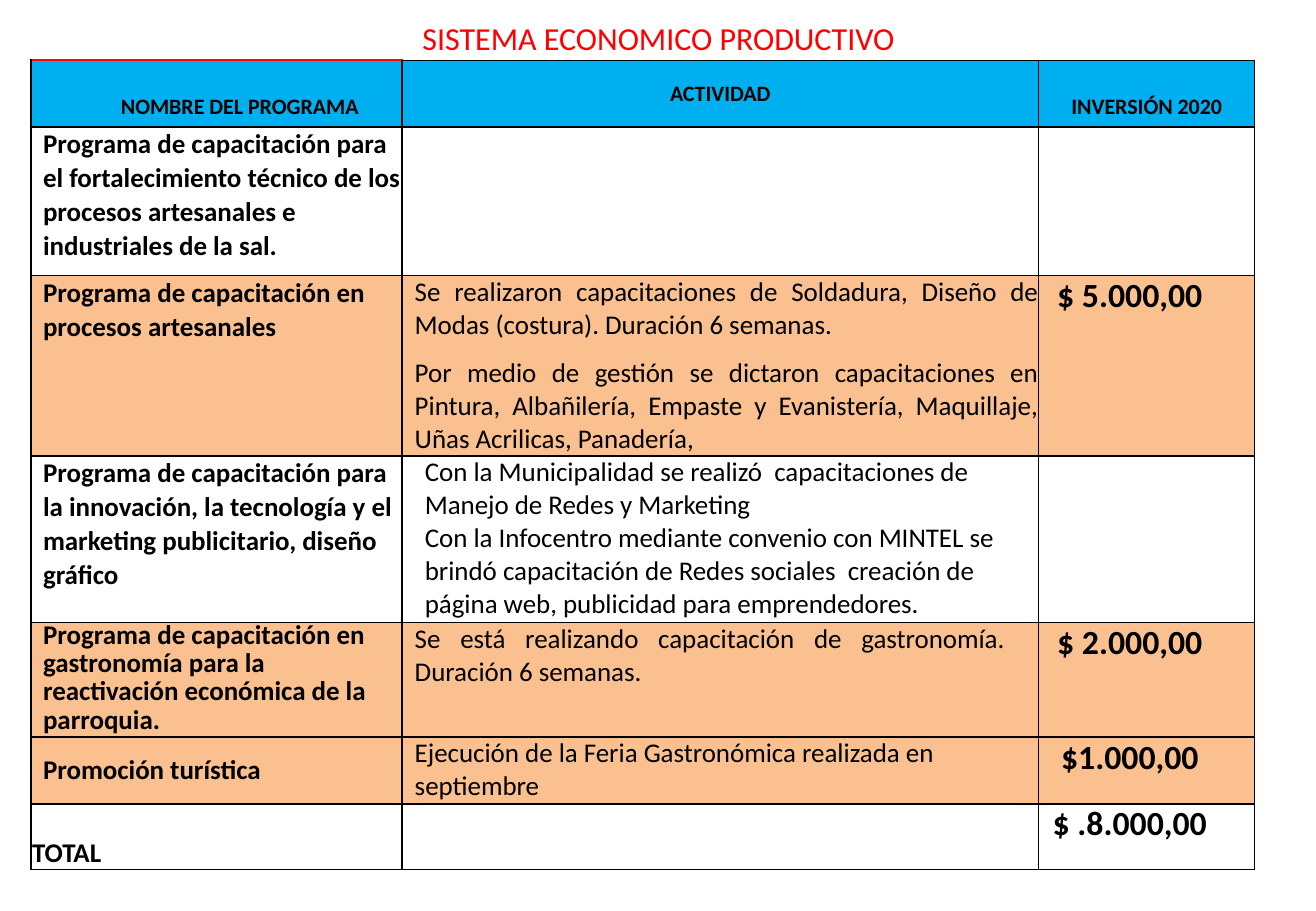
import pptx
import pptx.util
import pptx.dml.color
import pptx.enum.text
import pptx.oxml
import pptx.oxml.ns
from dataclasses import dataclass

Cm, Pt = pptx.util.Cm, pptx.util.Pt
ALIGN = pptx.enum.text.PP_ALIGN
ANCHOR = pptx.enum.text.MSO_ANCHOR


@dataclass(frozen=True)
class Theme:
    font: str = "Calibri"
    ink: str = "000000"
    title: str = "FF0000"
    header: str = "00AFEF"
    funded: str = "FAC090"
    plain: str = "FFFFFF"
    title_size: int = 19
    header_size: int = 13
    body_size: int = 16
    amount_size: int = 20
    border: float = 1
    accent_border: float = 1.5


THEME = Theme()

TITLE = "SISTEMA ECONOMICO PRODUCTIVO"
HEADERS = ["NOMBRE DEL PROGRAMA", "ACTIVIDAD", "INVERSIÓN 2020"]
PROGRAMS = [
    ("Programa de capacitación para el fortalecimiento técnico de los procesos "
     "artesanales e industriales de la sal.", [], ""),
    ("Programa de capacitación en procesos artesanales",
     ["Se realizaron capacitaciones de Soldadura, Diseño de Modas (costura). "
      "Duración 6 semanas.",
      "Por medio de gestión se dictaron capacitaciones en Pintura, Albañilería, "
      "Empaste y Evanistería, Maquillaje, Uñas Acrilicas, Panadería,"],
     "$ 5.000,00"),
    ("Programa de capacitación para la innovación, la tecnología y el marketing "
     "publicitario, diseño gráfico",
     ["Con la Municipalidad se realizó  capacitaciones de Manejo de Redes y Marketing",
      "Con la Infocentro mediante convenio con MINTEL se brindó capacitación de "
      "Redes sociales  creación de página web, publicidad para emprendedores."],
     ""),
    ("Programa de capacitación en gastronomía para la reactivación económica de la "
     "parroquia.",
     ["Se está realizando capacitación de gastronomía. Duración 6 semanas."],
     "$ 2.000,00"),
    ("Promoción turística",
     ["Ejecución de la Feria Gastronómica realizada en septiembre"], "$1.000,00"),
    ("TOTAL", [], "$ .8.000,00"),
]

COLUMN_WIDTHS = [7.75, 13.31, 4.52]
ROW_HEIGHTS = [1.4, 3.1, 3.78, 3.48, 2.39, 1.4, 1.37]

HEADER_FORMATS = [
    {"margin_left": Cm(0.97), "margin_top": Cm(0.56)},
    {},
    {"margin_top": Cm(0.56)},
]
NAME = {"margin_left": Cm(0.25)}
ACTIVITY = {"margin_left": Cm(0.27)}
AMOUNT = {"margin_right": Cm(0.7)}
MIDDLE = {"vertical_anchor": ANCHOR.MIDDLE}

# Cell and paragraph formats that depart from the column's usual ones, by row and column
CELL_FORMATS = {
    (3, 1): {"margin_left": Cm(0.48)},
    (4, 0): MIDDLE,
    (4, 1): {"margin_right": Cm(0.7)},
    (5, 0): MIDDLE,
    (6, 0): {"margin_left": Cm(0.02), "margin_top": Cm(0.69)},
}
PARAGRAPH_FORMATS = {
    (1, 0): {"line_spacing": 1.03},
    (2, 0): {"line_spacing": 1.03},
    (2, 1): {"alignment": ALIGN.JUSTIFY, "space_before": Pt(8.9)},
    (3, 0): {"line_spacing": 1.03},
    (4, 0): {"line_spacing": Pt(16.8)},
    (4, 1): {"alignment": ALIGN.JUSTIFY},
}


def apply(target, formats):
    for name, value in formats.items():
        setattr(target, name, value)


def write(frame, lines, size, color, bold, paragraph_format):
    for number, line in enumerate(lines):
        paragraph = frame.add_paragraph() if number else frame.paragraphs[0]
        apply(paragraph, paragraph_format)
        run = paragraph.add_run()
        run.text = line
        apply(run.font, {"name": THEME.font, "size": Pt(size), "bold": bold})
        run.font.color.rgb = pptx.dml.color.RGBColor.from_string(color)


def draw_borders(cell, top_color, top_width):
    """Line all four sides; the lines must precede the fill in the cell properties."""
    sides = [("lnL", THEME.ink, THEME.border), ("lnR", THEME.ink, THEME.border),
             ("lnT", top_color, top_width), ("lnB", THEME.ink, THEME.border)]
    properties = cell._tc.get_or_add_tcPr()
    for position, (side, color, width) in enumerate(sides):
        properties.insert(position, pptx.oxml.parse_xml(
            f'<a:{side} {pptx.oxml.ns.nsdecls("a")} w="{int(Pt(width))}">'
            f'<a:solidFill><a:srgbClr val="{color}"/></a:solidFill></a:{side}>'))


def fill_cell(cell, lines, fill, size, bold, cell_format, paragraph_format):
    apply(cell, {"margin_left": 0, "margin_right": 0, "margin_top": 0,
                 "margin_bottom": 0, **cell_format})
    cell.fill.solid()
    cell.fill.fore_color.rgb = pptx.dml.color.RGBColor.from_string(fill)
    write(cell.text_frame, lines, size, THEME.ink, bold, paragraph_format)


def add_title(slide):
    title = slide.shapes.title
    apply(title, {"left": Cm(4.95), "top": Cm(0.28), "width": Cm(17.63), "height": Cm(1)})
    apply(title.text_frame, {"margin_top": 0, "margin_bottom": 0, "word_wrap": True,
                             "auto_size": pptx.enum.text.MSO_AUTO_SIZE.NONE, **MIDDLE})
    write(title.text_frame, [TITLE], THEME.title_size, THEME.title, False,
          {"alignment": ALIGN.CENTER})


def add_programs(slide):
    table = slide.shapes.add_table(
        len(ROW_HEIGHTS), len(COLUMN_WIDTHS), Cm(0.65), Cm(1.26),
        Cm(sum(COLUMN_WIDTHS)), Cm(sum(ROW_HEIGHTS))).table
    apply(table, {"first_row": False, "horz_banding": False})
    for column, width in zip(table.columns, COLUMN_WIDTHS):
        column.width = Cm(width)
    for row, height in zip(table.rows, ROW_HEIGHTS):
        row.height = Cm(height)

    for column, (header, header_format) in enumerate(zip(HEADERS, HEADER_FORMATS)):
        fill_cell(table.cell(0, column), [header], THEME.header, THEME.header_size, True,
                  {**MIDDLE, **header_format}, {"alignment": ALIGN.CENTER})

    for row, (name, activities, amount) in enumerate(PROGRAMS, start=1):
        fill = THEME.funded if activities and amount else THEME.plain
        columns = [
            ([name], THEME.body_size, True, NAME, {}),
            (activities, THEME.body_size, False, ACTIVITY, {}),
            ([amount] if amount else [], THEME.amount_size, True, AMOUNT,
             {"alignment": ALIGN.CENTER}),
        ]
        for column, (lines, size, bold, cell_format, paragraph_format) in enumerate(columns):
            place = row, column
            fill_cell(table.cell(*place), lines, fill, size, bold,
                      {**cell_format, **CELL_FORMATS.get(place, {})},
                      {**paragraph_format, **PARAGRAPH_FORMATS.get(place, {})})

    for cell in table.iter_cells():
        draw_borders(cell, THEME.ink, THEME.border)
    first_top = table.cell(0, 0)._tc.tcPr.find(pptx.oxml.ns.qn("a:lnT"))
    first_top.set("w", str(int(Pt(THEME.accent_border))))
    first_top[0][0].set("val", THEME.title)


def main():
    deck = pptx.Presentation()
    apply(deck, {"slide_width": Cm(27.51), "slide_height": Cm(19.05)})
    slide = deck.slides.add_slide(deck.slide_layouts.get_by_name("Title Only"))
    add_title(slide)
    add_programs(slide)
    deck.save("out.pptx")


if __name__ == "__main__":
    main()
